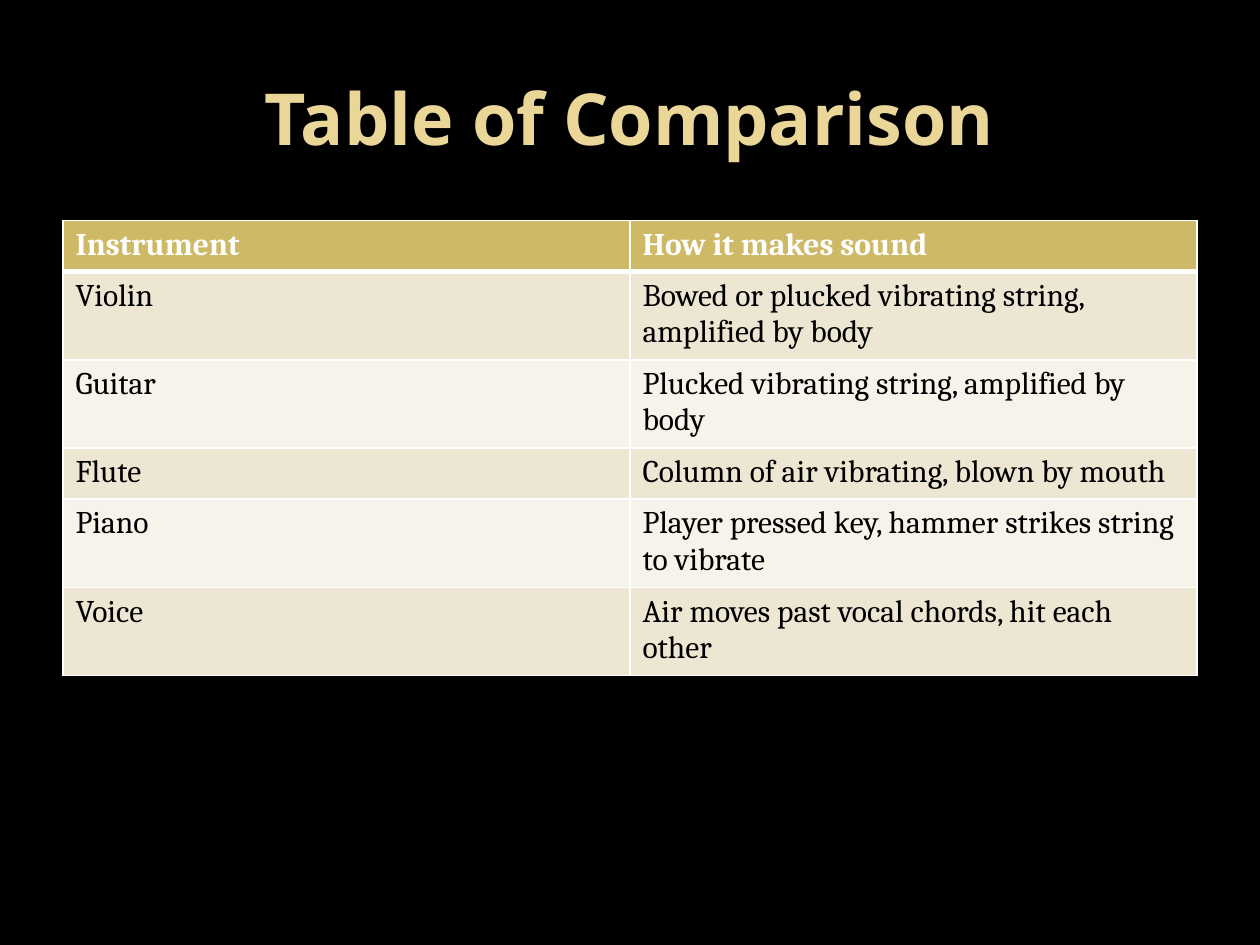
"""Build a slide comparing how instruments make sound."""
from dataclasses import dataclass

from lxml.etree import SubElement
from pptx import Presentation
from pptx.dml.color import RGBColor
from pptx.enum.text import MSO_ANCHOR, PP_ALIGN
from pptx.oxml.ns import qn
from pptx.util import Pt

TITLE = "Table of Comparison"
ROWS = [
    ("Instrument", "How it makes sound"),
    ("Violin", "Bowed or plucked vibrating string, amplified by body"),
    ("Guitar", "Plucked vibrating string, amplified by body"),
    ("Flute", "Column of air vibrating, blown by mouth"),
    ("Piano", "Player pressed key, hammer strikes string to vibrate"),
    ("Voice", "Air moves past vocal chords, hit each other"),
]


@dataclass(frozen=True)
class Theme:
    background: str = "000000"
    title: str = "EAD696"
    header: str = "CEB966"
    bands: tuple = ("EDE6D3", "F6F3EA")
    header_text: str = "FFFFFF"
    body_text: str = "000000"
    border: str = "FFFFFF"
    title_font: str = "Open Sans"
    body_font: str = "Cambria"
    title_size: int = 41
    body_size: int = 18
    thin: int = 1
    thick: int = 3


THEME = Theme()
LEFT, WIDTH = 36, 648
TITLE_TOP, TITLE_HEIGHT = 21.6, 90
TABLE_TOP, ROW_HEIGHT = 126, 29.2


def add_run(paragraph, text, font, size, color, bold):
    run = paragraph.add_run()
    run.text = text
    run.font.name = font
    run.font.size = Pt(size)
    run.font.bold = bold
    run.font.color.rgb = RGBColor.from_string(color)


def add_border(cell, side, width):
    properties = cell._tc.get_or_add_tcPr()
    line = SubElement(properties, qn(f"a:ln{side}"), w=str(Pt(width)))
    fill = SubElement(line, qn("a:solidFill"))
    SubElement(fill, qn("a:srgbClr"), val=THEME.border)


def add_title(slide):
    box = slide.shapes.add_textbox(Pt(LEFT), Pt(TITLE_TOP), Pt(WIDTH), Pt(TITLE_HEIGHT))
    frame = box.text_frame
    frame.word_wrap = True
    frame.vertical_anchor = MSO_ANCHOR.MIDDLE
    paragraph = frame.paragraphs[0]
    paragraph.alignment = PP_ALIGN.CENTER
    add_run(paragraph, TITLE, THEME.title_font, THEME.title_size, THEME.title, True)


def add_comparison(slide):
    table = slide.shapes.add_table(
        len(ROWS), len(ROWS[0]), Pt(LEFT), Pt(TABLE_TOP), Pt(WIDTH), Pt(ROW_HEIGHT * len(ROWS))
    ).table
    for row, texts in enumerate(ROWS):
        is_header = row == 0
        fill = THEME.header if is_header else THEME.bands[(row - 1) % 2]
        color = THEME.header_text if is_header else THEME.body_text
        widths = {
            "L": THEME.thin,
            "R": THEME.thin,
            "T": THEME.thick if row == 1 else THEME.thin,
            "B": THEME.thick if is_header else THEME.thin,
        }
        for column, text in enumerate(texts):
            cell = table.cell(row, column)
            for side, width in widths.items():
                add_border(cell, side, width)
            cell.fill.solid()
            cell.fill.fore_color.rgb = RGBColor.from_string(fill)
            paragraph = cell.text_frame.paragraphs[0]
            add_run(paragraph, text, THEME.body_font, THEME.body_size, color, is_header)


def main():
    presentation = Presentation()
    presentation.slide_width, presentation.slide_height = Pt(720), Pt(540)
    slide = presentation.slides.add_slide(presentation.slide_layouts[6])
    slide.background.fill.solid()
    slide.background.fill.fore_color.rgb = RGBColor.from_string(THEME.background)
    add_title(slide)
    add_comparison(slide)
    presentation.save("out.pptx")


if __name__ == "__main__":
    main()
